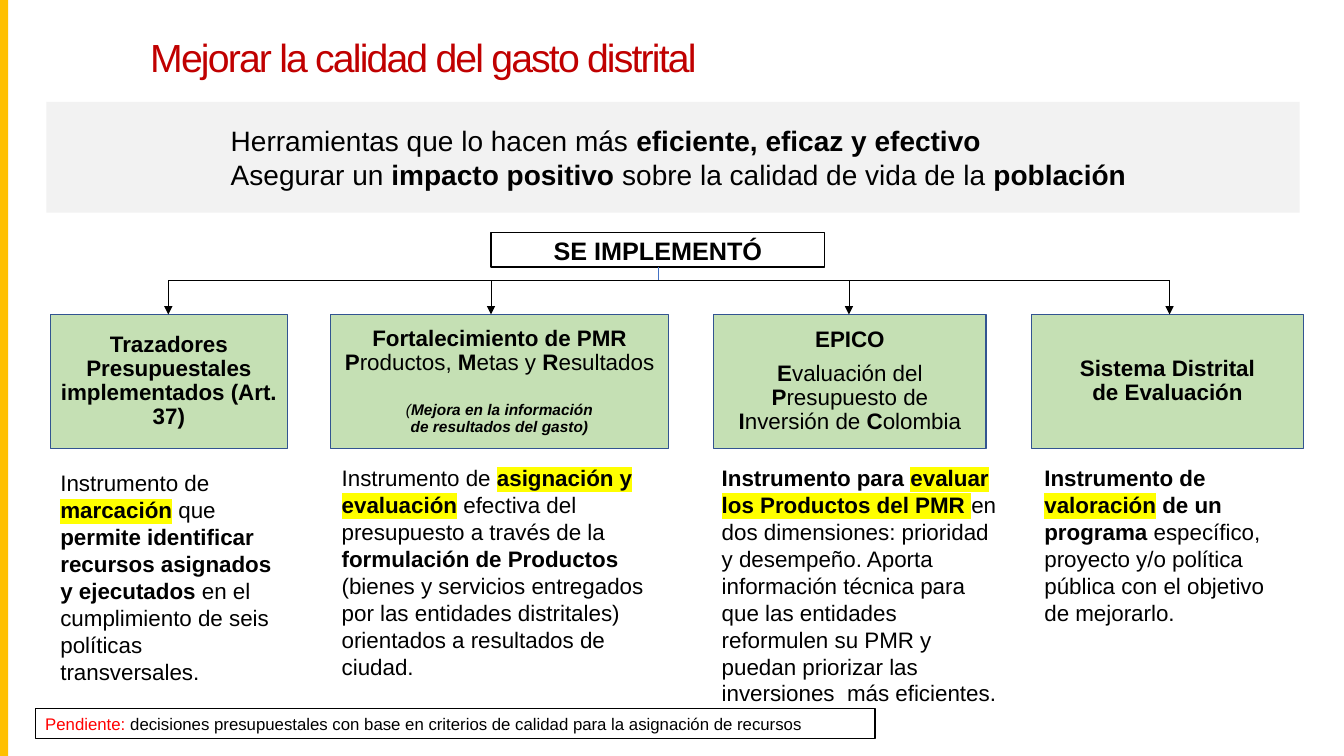
from lxml import etree
from pptx import Presentation
from pptx.dml.color import RGBColor
from pptx.enum.shapes import MSO_CONNECTOR, MSO_SHAPE
from pptx.enum.text import MSO_ANCHOR, PP_ALIGN
from pptx.oxml.ns import qn
from pptx.util import Inches, Pt

RECT, STRAIGHT = MSO_SHAPE.RECTANGLE, MSO_CONNECTOR.STRAIGHT
TOP, MIDDLE = MSO_ANCHOR.TOP, MSO_ANCHOR.MIDDLE
LEFT, CENTER = PP_ALIGN.LEFT, PP_ALIGN.CENTER

THEME = {
    "font": "Arial",
    "black": "000000", "white": "FFFFFF", "accent": "FFC000", "band": "F2F2F2",
    "card": "C5E0B4", "card_line": "325491", "stem": "4472C4",
    "title": "C00000", "alert": "FF0000", "mark": "FFFF00",
    "title_size": 28, "lead_size": 20, "root_size": 18,
    "body_size": 16, "note_size": 12, "small_size": 11,
}

# Run styles: b bold, i italic, s small, h highlighted, a alert
TITLE = [[("Mejorar la calidad del gasto distrital", "")]]
LEAD = [
    [("Herramientas que lo hacen más ", ""), ("eficiente, eficaz y efectivo", "b")],
    [("Asegurar un ", ""), ("impacto positivo ", "b"),
     ("sobre la calidad de vida de la ", ""), ("población", "b")],
]
ROOT = [[("SE IMPLEMENTÓ", "b")]]
NOTE = [[("Pendiente: ", "a"),
         ("decisiones presupuestales con base en criterios de calidad "
          "para la asignación de recursos", "")]]

TOOLS = [
    {
        "card": (0.5, 2.35), "arrow": 1.67, "body": (0.5, 4.61, 2.35), "gap": 0,
        "head": [[("Trazadores Presupuestales implementados (Art. 37)", "b")]],
        "text": [[("Instrumento de ", ""), ("marcación", "bh"), (" que ", ""),
                  ("permite identificar recursos asignados y ejecutados", "b"),
                  (" en el cumplimiento de seis políticas transversales.", "")]],
    },
    {
        "card": (3.28, 3.35), "arrow": 4.87, "body": (3.29, 4.56, 3.32), "gap": 19,
        "head": [
            [("Fortalecimiento de PMR\nP", "b"), ("roductos, ", ""), ("M", "b"),
             ("etas y ", ""), ("R", "b"), ("esultados", "")],
            [("(", "is"), ("Mejora en la información\nde resultados del gasto)", "bis")],
        ],
        "text": [[("Instrumento de ", ""), ("asignación y evaluación", "bh"),
                  (" efectiva del presupuesto a través de la ", ""),
                  ("formulación de Productos", "b"),
                  (" (bienes y servicios entregados por las entidades distritales) "
                   "orientados a resultados de ciudad.", "")]],
    },
    {
        "card": (7.08, 2.7), "arrow": 8.42, "body": (7.06, 4.56, 2.94), "gap": 7,
        "head": [
            [("EPICO", "b")],
            [("E", "b"), ("valuación del", ""), (" P", "b"), ("resupuesto de ", ""),
             ("I", "b"), ("nversión de", ""), (" C", "b"), ("olombia", "")],
        ],
        "text": [[("Instrumento para ", "b"), ("evaluar los Productos del PMR ", "bh"),
                  ("en dos dimensiones: prioridad y desempeño. Aporta información "
                   "técnica para que las entidades reformulen su PMR y puedan "
                   "priorizar las inversiones  más eficientes.", "")]],
    },
    {
        "card": (10.23, 2.7), "arrow": 11.6, "body": (10.26, 4.56, 2.57), "gap": 0,
        "head": [[("Sistema Distrital\nde Evaluación", "b")]],
        "text": [[("Instrumento de ", "b"), ("valoración", "bh"),
                  (" de un programa", "b"),
                  (" específico, proyecto y/o política pública con el objetivo "
                   "de mejorarlo.", "")]],
    },
]
CARD_TOP, CARD_H = 3.12, 1.33
BUS_Y, ROOT_BOTTOM, ROOT_X = 2.78, 2.65, 6.53


def rgb(name):
    return RGBColor.from_string(THEME[name])


def write(sp, paragraphs, size="body_size", color="black", align=LEFT,
          anchor=TOP, spacing=1.0, gap=0, tracking=0):
    tf = sp.text_frame
    tf.word_wrap = True
    tf.vertical_anchor = anchor
    for n, runs in enumerate(paragraphs):
        p = tf.add_paragraph() if n else tf.paragraphs[0]
        p.alignment, p.line_spacing = align, spacing
        p.space_before, p.space_after = Pt(gap if n else 0), Pt(0)
        for text, style in runs:
            for k, line in enumerate(text.split("\n")):
                if k:
                    p.add_line_break()
                r = p.add_run()
                r.text = line
                f = r.font
                f.name = THEME["font"]
                f.size = Pt(THEME["small_size" if "s" in style else size])
                f.bold, f.italic = "b" in style, "i" in style
                f.color.rgb = rgb("alert" if "a" in style else color)
                rPr = r._r.get_or_add_rPr()
                if tracking:
                    rPr.set("spc", str(tracking))
                if "h" in style:
                    mark = etree.Element(qn("a:highlight"))
                    etree.SubElement(mark, qn("a:srgbClr"), val=THEME["mark"])
                    rPr.find(qn("a:solidFill")).addnext(mark)


def add_rect(s, box, fill, line=None):
    sp = s.shapes.add_shape(RECT, *map(Inches, box))
    sp.shadow.inherit = False
    sp.fill.solid()
    sp.fill.fore_color.rgb = rgb(fill)
    if line:
        sp.line.color.rgb = rgb(line)
        sp.line.width = Pt(1)
    else:
        sp.line.fill.background()
    return sp


def add_text(s, box, paragraphs, **style):
    write(s.shapes.add_textbox(*map(Inches, box)), paragraphs, **style)


def add_line(s, x1, y1, x2, y2, color="black", arrow=False):
    c = s.shapes.add_connector(STRAIGHT, *map(Inches, (x1, y1, x2, y2)))
    c.line.color.rgb = rgb(color)
    c.line.width = Pt(0.5)
    if arrow:
        etree.SubElement(c.line._get_or_add_ln(), qn("a:tailEnd"), type="triangle")
    etree.SubElement(c._element.spPr, qn("a:effectLst"))


def main():
    prs = Presentation()
    prs.slide_width, prs.slide_height = Inches(13.33), Inches(7.5)
    s = prs.slides.add_slide(prs.slide_layouts[5])

    title = s.shapes.title
    title.left, title.top, title.width, title.height = map(
        Inches, (1.39, 0.19, 10.52, 0.61))
    write(title, TITLE, size="title_size", color="title", spacing=1.2, tracking=-130)

    add_rect(s, (0, 0, 0.08, 7.5), "accent")
    add_rect(s, (0.46, 1.01, 12.43, 1.1), "band")
    add_text(s, (2.19, 1.18, 9.81, 0.77), LEAD, size="lead_size")

    root = add_rect(s, (4.87, 2.31, 3.31, 0.34), "white", "black")
    write(root, ROOT, size="root_size", align=CENTER, anchor=MIDDLE)
    add_line(s, ROOT_X, ROOT_BOTTOM, ROOT_X, BUS_Y, color="stem")
    add_line(s, TOOLS[0]["arrow"], BUS_Y, TOOLS[-1]["arrow"], BUS_Y)

    for tool in TOOLS:
        left, width = tool["card"]
        card = add_rect(s, (left, CARD_TOP, width, CARD_H), "card", "card_line")
        write(card, tool["head"], align=CENTER, anchor=MIDDLE,
              spacing=0.9, gap=tool["gap"])
        add_line(s, tool["arrow"], BUS_Y, tool["arrow"], CARD_TOP, arrow=True)
        x, y, w = tool["body"]
        add_text(s, (x, y, w, 2.26), tool["text"])

    note = add_rect(s, (0.35, 7.03, 8.33, 0.3), "white", "black")
    write(note, NOTE, size="note_size")

    prs.save("out.pptx")


if __name__ == "__main__":
    main()
